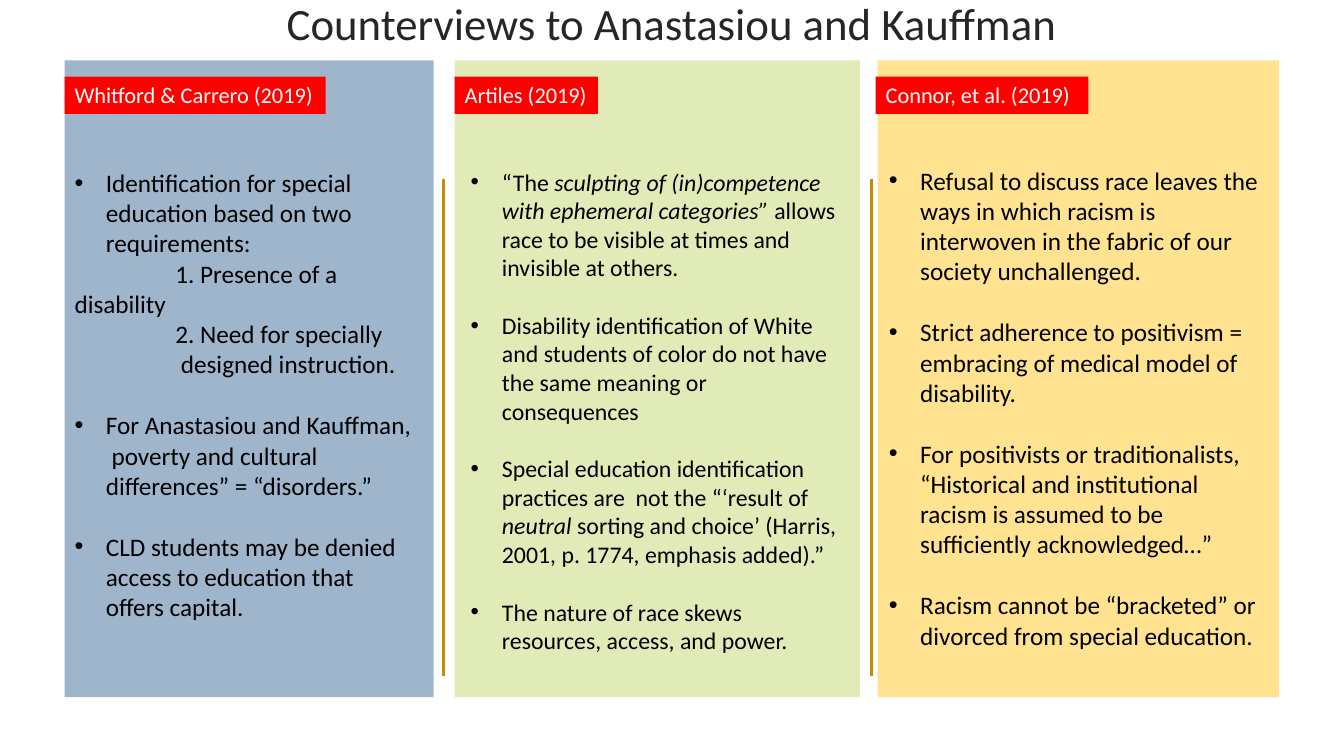
from lxml.etree import SubElement
from pptx import Presentation
from pptx.dml.color import RGBColor
from pptx.enum.shapes import MSO_CONNECTOR, MSO_SHAPE
from pptx.enum.text import MSO_ANCHOR, PP_ALIGN
from pptx.oxml.ns import qn
from pptx.util import Cm, Pt

FONT = "Calibri"
BLUE = RGBColor(0x44, 0x6E, 0x9C)
GREEN = RGBColor(0xC0, 0xD6, 0x69)
AMBER = RGBColor(0xFF, 0xC0, 0x00)
RED = RGBColor(0xFF, 0x00, 0x00)
GOLD = RGBColor(0xBF, 0x90, 0x00)
CHARCOAL = RGBColor(0x26, 0x26, 0x26)
BLACK = RGBColor(0x00, 0x00, 0x00)
WHITE = RGBColor(0xFF, 0xFF, 0xFF)

PANEL_TOP, PANEL_HEIGHT = 1.52, 16.05
LABEL_TOP, LABEL_HEIGHT = 1.93, 0.94
DIVIDER_TOP, DIVIDER_BOTTOM = 4.5, 17.04
BULLET_INDENT = 0.79
LINE_FACTOR = 1.22  # height of one text line relative to the font size

# Each text is (words, first-line indent in cm); None marks a bullet.
# Asterisks enclose italics.
COLUMNS = [
    {
        "panel": (1.63, 9.3, BLUE, 51),
        "label": ("Whitford & Carrero (2019)", 1.63, 6.58),
        "body": (1.63, 4.09, 9.09, 11.02),
        "size": 18,
        "texts": [
            ("Identification for special education based on two requirements:", None),
            ("1. Presence of a disability", 2.54),
            ("2. Need for specially", 2.54),
            ("designed instruction.", 2.68),
            ("For Anastasiou and Kauffman,  poverty and cultural differences” = “disorders.”", None),
            ("CLD students may be denied access to education that offers capital.", None),
        ],
    },
    {
        "panel": (11.46, 10.21, GREEN, 48),
        "label": ("Artiles (2019)", 11.46, 3.61),
        "body": (11.61, 4.09, 9.83, 12.62),
        "size": 17,
        "texts": [
            ("“The *sculpting of (in)competence with ephemeral categories” *"
             "allows race to be visible at times and invisible at others.", None),
            ("Disability identification of White and students of color "
             "do not have the same meaning or consequences", None),
            ("Special education identification practices are  not the “‘result of "
             "*neutral *sorting and choice’ (Harris, 2001, p. 1774, emphasis added).”", None),
            ("The nature of race skews resources, access, and power.", None),
        ],
    },
    {
        "panel": (22.12, 10.11, AMBER, 43),
        "label": ("Connor, et al. (2019)", 22.07, 5.36),
        "body": (22.15, 4.03, 10.11, 12.57),
        "size": 18,
        "texts": [
            ("Refusal to discuss race leaves the ways in which racism is "
             "interwoven in the fabric of our society unchallenged.", None),
            ("Strict adherence to positivism = embracing of medical model of disability.", None),
            ("For positivists or traditionalists, “Historical and institutional "
             "racism is assumed to be sufficiently acknowledged…”", None),
            ("Racism cannot be “bracketed” or divorced from special education.", None),
        ],
    },
]


def write_text(paragraph, text, size=18, color=BLACK, align=PP_ALIGN.LEFT,
               space_before=0, line_spacing=1.0):
    paragraph.alignment = align
    paragraph.space_before = Pt(space_before)
    paragraph.line_spacing = line_spacing
    for index, part in enumerate(text.split("*")):
        run = paragraph.add_run()
        run.text = part
        run.font.name = FONT
        run.font.size = Pt(size)
        run.font.italic = index % 2 == 1
        run.font.color.rgb = color


def set_indent(paragraph, left, first_line):
    properties = paragraph._p.get_or_add_pPr()
    properties.set("marL", str(Cm(left)))
    properties.set("indent", str(Cm(first_line)))
    return properties


def add_bullet(paragraph):
    properties = set_indent(paragraph, BULLET_INDENT, -BULLET_INDENT)
    color = SubElement(properties, qn("a:buClr"))
    SubElement(color, qn("a:srgbClr"), val=str(BLACK))
    SubElement(properties, qn("a:buFont"), typeface="Arial")
    SubElement(properties, qn("a:buChar"), char="•")


def add_rectangle(slide, left, top, width, height, color, opacity=100):
    shape = slide.shapes.add_shape(
        MSO_SHAPE.RECTANGLE, Cm(left), Cm(top), Cm(width), Cm(height))
    shape.shadow.inherit = False
    shape.line.fill.background()
    shape.fill.solid()
    shape.fill.fore_color.rgb = color
    if opacity < 100:
        color_element = shape._element.spPr.find(f".//{qn('a:srgbClr')}")
        SubElement(color_element, qn("a:alpha"), val=str(opacity * 1000))
    return shape


def add_text_frame(slide, left, top, width, height):
    frame = slide.shapes.add_textbox(
        Cm(left), Cm(top), Cm(width), Cm(height)).text_frame
    frame.word_wrap = True
    return frame


def add_title(slide, text):
    frame = add_text_frame(slide, 1.73, -0.64, 30.4, 2.57)
    frame.vertical_anchor = MSO_ANCHOR.MIDDLE
    write_text(frame.paragraphs[0], text, size=32, color=CHARCOAL,
               align=PP_ALIGN.CENTER, line_spacing=0.9)


def add_body(slide, box, texts, size):
    frame = add_text_frame(slide, *box)
    for index, (text, first_line) in enumerate(texts):
        paragraph = frame.add_paragraph() if index else frame.paragraphs[0]
        gap = 0
        if first_line is None:
            add_bullet(paragraph)
            gap = size * LINE_FACTOR if index else 0
        else:
            set_indent(paragraph, 0, first_line)
        write_text(paragraph, text, size=size, space_before=gap)


def add_label(slide, text, left, width):
    shape = add_rectangle(slide, left, LABEL_TOP, width, LABEL_HEIGHT, RED)
    shape.text_frame.word_wrap = True
    shape.text_frame.vertical_anchor = MSO_ANCHOR.TOP
    write_text(shape.text_frame.paragraphs[0], text, size=16, color=WHITE)


def add_divider(slide, x):
    connector = slide.shapes.add_connector(
        MSO_CONNECTOR.STRAIGHT, Cm(x), Cm(DIVIDER_TOP), Cm(x), Cm(DIVIDER_BOTTOM))
    connector.line.color.rgb = GOLD
    connector.line.width = Pt(2)
    SubElement(connector._element.spPr, qn("a:effectLst"))


def main():
    presentation = Presentation()
    presentation.slide_width = Cm(33.87)
    presentation.slide_height = Cm(19.05)
    slide = presentation.slides.add_slide(presentation.slide_layouts[6])

    # Title and the three columns
    add_title(slide, "Counterviews to Anastasiou and Kauffman")
    for column in COLUMNS:
        left, width, color, opacity = column["panel"]
        add_rectangle(slide, left, PANEL_TOP, width, PANEL_HEIGHT, color, opacity)
        add_body(slide, column["body"], column["texts"], column["size"])
        add_label(slide, *column["label"])

    # Dividers between the columns
    for x in (11.18, 21.97):
        add_divider(slide, x)

    presentation.save("out.pptx")


if __name__ == "__main__":
    main()
